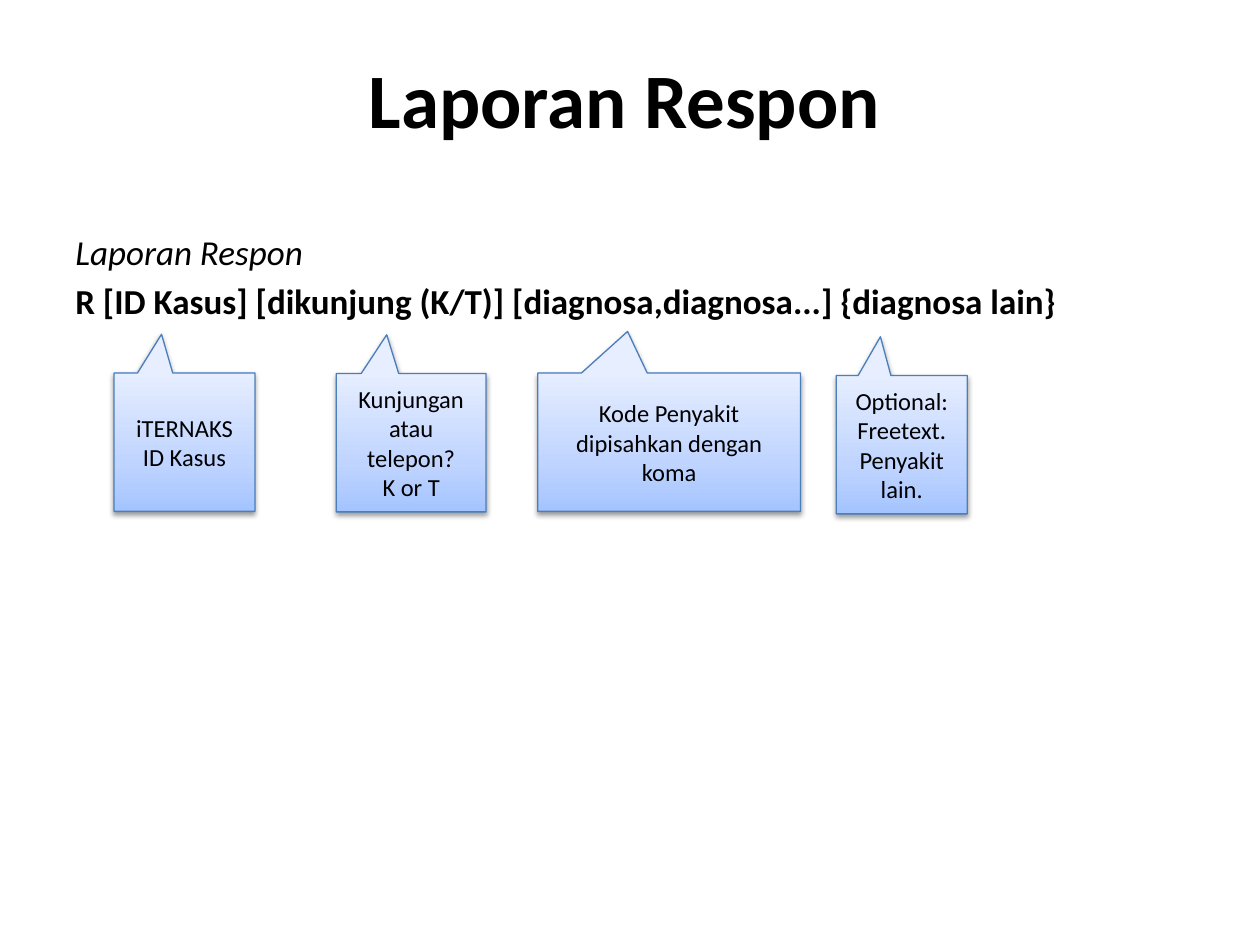
"""Build the slide explaining the response report message format."""
from pptx import Presentation
from pptx.dml.color import RGBColor
from pptx.enum.shapes import MSO_SHAPE
from pptx.enum.text import MSO_ANCHOR, PP_ALIGN
from pptx.oxml import parse_xml
from pptx.oxml.ns import nsdecls, qn
from pptx.util import Cm, Pt

CALLOUT = MSO_SHAPE.RECTANGULAR_CALLOUT
MIDDLE = MSO_ANCHOR.MIDDLE
LEFT, CENTER = PP_ALIGN.LEFT, PP_ALIGN.CENTER
FONT = "Calibri"
BLACK = RGBColor(0x00, 0x00, 0x00)
BORDER = RGBColor(0x4B, 0x7E, 0xBC)
GRADIENT = [
    (0, RGBColor(0xA4, 0xC4, 0xFF)),
    (35, RGBColor(0xBF, 0xD4, 0xFF)),
    (100, RGBColor(0xE6, 0xEE, 0xFF)),
]

TITLE = "Laporan Respon"
REPORT_NAME = "Laporan Respon"
REPORT_FORMAT = "R [ID Kasus] [dikunjung (K/T)] [diagnosa,diagnosa...] {diagnosa lain}"
CALLOUT_HEIGHT = 2.79
CALLOUTS = [
    ("iTERNAKS ID Kasus", 2.3, 7.52, 2.84, (-0.163, -0.78)),
    ("Kunjungan atau telepon?\nK or T", 6.78, 7.53, 3.02, (-0.163, -0.78)),
    ("Kode Penyakit dipisahkan dengan koma", 10.84, 7.52, 5.3, (-0.158, -0.8)),
    ("Optional: Freetext. Penyakit lain.", 16.86, 7.57, 2.64, (-0.163, -0.78)),
]


def style_text(shape, size, alignment):
    """Wrap the text and format every paragraph and run of a shape."""
    shape.text_frame.word_wrap = True
    for paragraph in shape.text_frame.paragraphs:
        paragraph.alignment = alignment
        for span in paragraph.runs:
            span.font.name = FONT
            span.font.size = Pt(size)
            span.font.color.rgb = BLACK


def add_text(page, text, left, top, width, height, size, alignment):
    """Add a text box and return its paragraphs."""
    box = page.shapes.add_textbox(Cm(left), Cm(top), Cm(width), Cm(height))
    box.text_frame.text = text
    style_text(box, size, alignment)
    return box.text_frame.paragraphs


def apply_gradient(shape):
    """Fill a shape with the upward blue gradient."""
    shape.fill.gradient()
    gradient = shape.element.spPr.find(qn("a:gradFill"))
    gradient.find(qn("a:lin")).set("ang", str(270 * 60000))
    stops = gradient.find(qn("a:gsLst"))
    for stop in list(stops):
        stops.remove(stop)
    for position, color in GRADIENT:
        stops.append(parse_xml(
            f'<a:gs {nsdecls("a")} pos="{position * 1000}">'
            f'<a:srgbClr val="{color}"/></a:gs>'
        ))


def apply_shadow(shape):
    """Give a shape a soft shadow falling downwards."""
    shape.shadow.inherit = False
    shape.element.spPr.find(qn("a:effectLst")).append(parse_xml(
        f'<a:outerShdw {nsdecls("a")} blurRad="{Pt(3.1)}" dist="{Pt(1.6)}" '
        'dir="5400000" rotWithShape="0"><a:srgbClr val="000000">'
        '<a:alpha val="38000"/></a:srgbClr></a:outerShdw>'
    ))


def add_callout(page, text, left, top, width, pointer):
    """Add a callout whose pointer reaches up to the report format."""
    callout = page.shapes.add_shape(
        CALLOUT, Cm(left), Cm(top), Cm(width), Cm(CALLOUT_HEIGHT)
    )
    for index, offset in enumerate(pointer):
        callout.adjustments[index] = offset
    apply_gradient(callout)
    callout.line.color.rgb = BORDER
    callout.line.width = Pt(0.75)
    apply_shadow(callout)
    callout.text_frame.text = text
    callout.text_frame.vertical_anchor = MIDDLE
    style_text(callout, 14, CENTER)


def main():
    """Assemble and save the deck."""
    deck = Presentation()
    deck.slide_width, deck.slide_height = Cm(25.4), Cm(19.05)
    page = deck.slides.add_slide(deck.slide_layouts[6])

    heading = add_text(page, TITLE, 1.09, 0.91, 23.01, 2.13, 44, CENTER)[0]
    heading.runs[0].font.bold = True

    body = f"{REPORT_NAME}\n{REPORT_FORMAT}"
    name, pattern = add_text(page, body, 1.27, 4.52, 22.86, 12.5, 20, LEFT)
    name.space_before = pattern.space_before = Pt(4)
    name.runs[0].font.italic = True
    pattern.runs[0].font.bold = True

    for callout in CALLOUTS:
        add_callout(page, *callout)

    deck.save("out.pptx")


if __name__ == "__main__":
    main()
